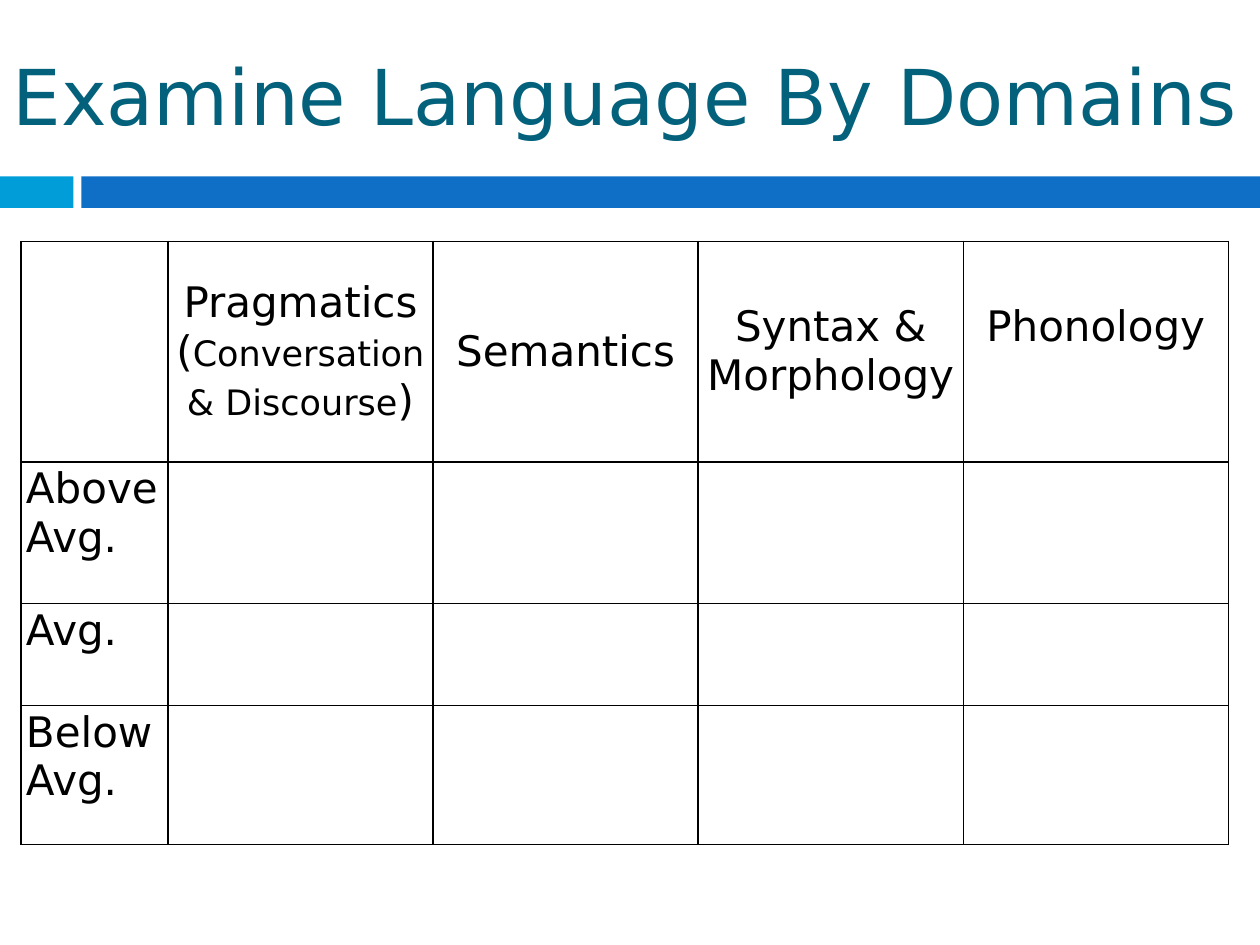
from dataclasses import dataclass

from lxml.etree import SubElement
from pptx import Presentation
from pptx.dml.color import RGBColor
from pptx.enum.shapes import MSO_SHAPE
from pptx.enum.text import MSO_ANCHOR as Anchor, PP_ALIGN as Align
from pptx.oxml.ns import qn
from pptx.util import Pt

FONT = "DejaVu Sans"
TEAL = RGBColor(0x04, 0x61, 0x7B)
CYAN = RGBColor(0x00, 0x9D, 0xD9)
BLUE = RGBColor(0x0F, 0x6F, 0xC6)
BLACK = RGBColor(0, 0, 0)

SLIDE_WIDTH, SLIDE_HEIGHT = 720, 540
GRID_LEFT, GRID_TOP = 12, 137.9
COLUMN_WIDTHS = [84] + [151.5] * 4
ROW_HEIGHTS = [126, 81, 58.3, 79.4]
LARGE, SMALL = 24, 20
CELL_MARGINS = {"margin_left": Pt(2.88), "margin_right": Pt(2.88),
                "margin_top": Pt(1.44), "margin_bottom": Pt(1.44)}


@dataclass(frozen=True)
class Band:
    left: float
    width: float
    color: RGBColor


@dataclass(frozen=True)
class Domain:
    """A column heading; each line is a list of (text, size) pieces."""
    lines: list[list[tuple[str, float]]]
    lift: float = 0


BANDS = [Band(0, 42, CYAN), Band(46.5, 673.5, BLUE)]
DOMAINS = [
    Domain([[("Pragmatics", LARGE)],
            [("(", LARGE), ("Conversation", SMALL), (" ", LARGE),
             ("& Discourse", SMALL), (")", LARGE)]]),
    Domain([[("Semantics", LARGE)]]),
    Domain([[("Syntax & Morphology", LARGE)]]),
    Domain([[("Phonology", LARGE)]], lift=14),
]
LEVELS = ["Above Avg.", "Avg.", "Below Avg."]


def set_attributes(target, values: dict) -> None:
    for name, value in values.items():
        setattr(target, name, value)


def add_piece(paragraph, text: str, size: float, color: RGBColor) -> None:
    piece = paragraph.add_run()
    piece.text = text
    set_attributes(piece.font, {"name": FONT, "size": Pt(size), "bold": False})
    piece.font.color.rgb = color


def add_band(slide, band: Band) -> None:
    bar = slide.shapes.add_shape(MSO_SHAPE.RECTANGLE, Pt(band.left), Pt(100.8),
                                 Pt(band.width), Pt(18))
    bar.shadow.inherit = False
    bar.fill.solid()
    bar.fill.fore_color.rgb = band.color
    bar.line.fill.background()


def add_title(slide, text: str) -> None:
    title = slide.shapes.title
    set_attributes(title, {"left": 0, "top": 0,
                           "width": Pt(SLIDE_WIDTH), "height": Pt(108)})
    set_attributes(title.text_frame, {"word_wrap": True,
                                      "vertical_anchor": Anchor.MIDDLE})
    heading = title.text_frame.paragraphs[0]
    heading.alignment = Align.LEFT
    add_piece(heading, text, 44, TEAL)


def format_cell(cell) -> None:
    """Give the cell thin black borders, narrow margins and no fill."""
    set_attributes(cell, CELL_MARGINS)
    properties = cell._tc.get_or_add_tcPr()
    for side in ("lnL", "lnR", "lnT", "lnB"):
        border = SubElement(properties, qn(f"a:{side}"), w=str(Pt(1)))
        fill = SubElement(border, qn("a:solidFill"))
        SubElement(fill, qn("a:srgbClr"), val=str(BLACK))
    cell.fill.background()


def fill_domain(cell, domain: Domain) -> None:
    cell.vertical_anchor = Anchor.MIDDLE
    cell.margin_bottom += Pt(2 * domain.lift)
    frame = cell.text_frame
    for index, line in enumerate(domain.lines):
        paragraph = frame.add_paragraph() if index else frame.paragraphs[0]
        paragraph.alignment = Align.CENTER
        for text, size in line:
            add_piece(paragraph, text, size, BLACK)


def add_grid(slide) -> None:
    grid = slide.shapes.add_table(
        len(ROW_HEIGHTS), len(COLUMN_WIDTHS), Pt(GRID_LEFT), Pt(GRID_TOP),
        Pt(sum(COLUMN_WIDTHS)), Pt(sum(ROW_HEIGHTS))).table
    set_attributes(grid, {"first_row": False, "horz_banding": False})
    for column, width in zip(grid.columns, COLUMN_WIDTHS):
        column.width = Pt(width)
    for row, height in zip(grid.rows, ROW_HEIGHTS):
        row.height = Pt(height)
    for cell in grid.iter_cells():
        format_cell(cell)
    for column, domain in enumerate(DOMAINS, start=1):
        fill_domain(grid.cell(0, column), domain)
    for row, level in enumerate(LEVELS, start=1):
        add_piece(grid.cell(row, 0).text_frame.paragraphs[0], level, LARGE, BLACK)


def main() -> None:
    deck = Presentation()
    set_attributes(deck, {"slide_width": Pt(SLIDE_WIDTH),
                          "slide_height": Pt(SLIDE_HEIGHT)})
    slide = deck.slides.add_slide(deck.slide_layouts.get_by_name("Title Only"))
    for band in BANDS:
        add_band(slide, band)
    add_title(slide, "Examine Language By Domains")
    add_grid(slide)
    deck.save("out.pptx")


if __name__ == "__main__":
    main()
